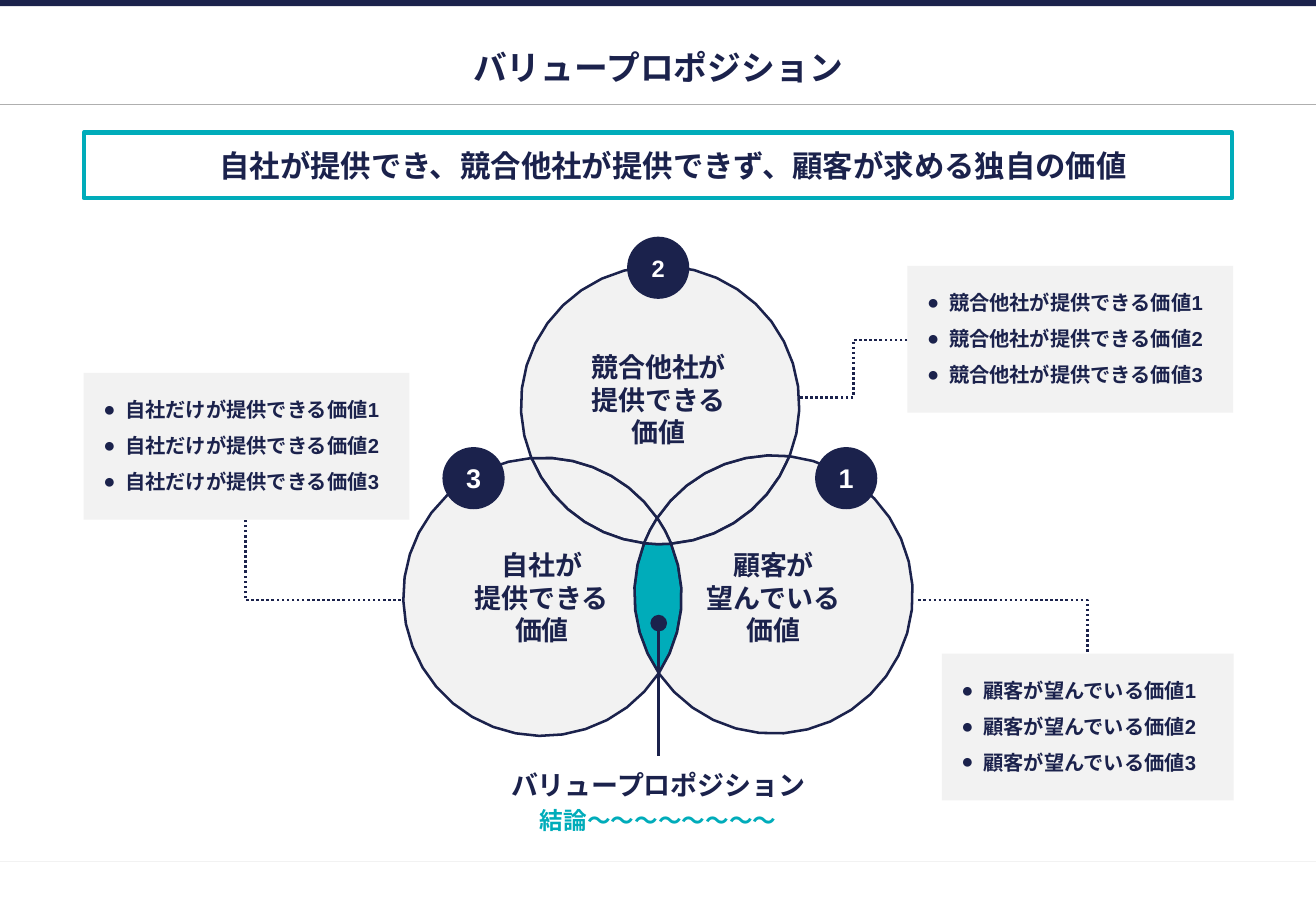
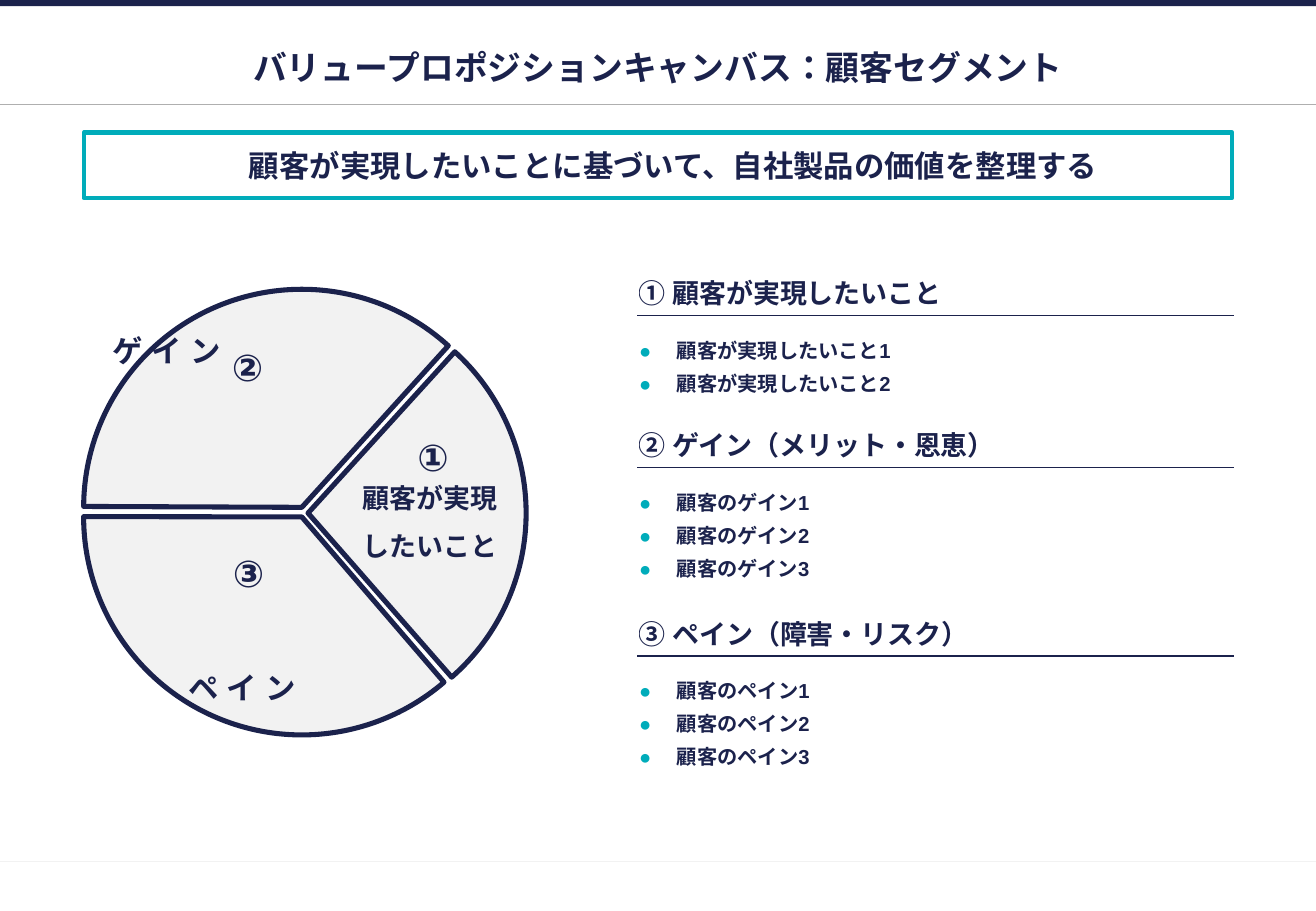
import math
from dataclasses import dataclass
from typing import Any, Optional, Sequence

import pptx
import pptx.dml.color
import pptx.enum.dml
import pptx.enum.lang
import pptx.enum.shapes
import pptx.enum.text
import pptx.oxml.ns
import pptx.presentation
import pptx.slide
import pptx.util
from lxml import etree

NAVY = pptx.dml.color.RGBColor(0x1B, 0x22, 0x4C)
TEAL = pptx.dml.color.RGBColor(0x00, 0xAC, 0xBA)
PALE = pptx.dml.color.RGBColor(0xF2, 0xF2, 0xF2)
GREY = pptx.dml.color.RGBColor(0xAF, 0xAF, 0xAF)
WHITE = pptx.dml.color.RGBColor(0xFF, 0xFF, 0xFF)
FONT = "Arial"
WIDTH, HEIGHT, MARGIN = 27.51, 19.05, 1.75
CONTENT_WIDTH = WIDTH - 2 * MARGIN
ARC_STEP = math.radians(10)

SHAPE = pptx.enum.shapes.MSO_SHAPE
CONNECTOR = pptx.enum.shapes.MSO_CONNECTOR
ANCHOR = pptx.enum.text.MSO_ANCHOR
ALIGN = pptx.enum.text.PP_ALIGN
Color = pptx.dml.color.RGBColor
Slide = pptx.slide.Slide
Point = tuple[float, float]
Insets = tuple[float, float, float, float]
NO_INSETS: Insets = (0, 0, 0, 0)
LABEL_INSETS: Insets = (0.25, 0.13, 0.25, 0.13)


@dataclass(frozen=True)
class Box:
    left: float
    top: float
    width: float
    height: float

    def lengths(self) -> list[pptx.util.Length]:
        return [pptx.util.Cm(value) for value in (self.left, self.top, self.width, self.height)]


@dataclass(frozen=True)
class Line:
    text: str
    size: float
    color: Color = NAVY
    align: Any = ALIGN.CENTER
    spacing: Optional[float] = None
    before: float = 0
    margin: float = 0
    indent: float = 0
    bullet: Optional[Color] = None


@dataclass(frozen=True)
class Circle:
    x: float
    y: float
    radius: float = 2.91

    def angle(self, point: Point) -> float:
        return math.atan2(point[1] - self.y, point[0] - self.x)

    def arc(self, start: Point, end: Point, major: bool) -> list[Point]:
        first = self.angle(start)
        sweep = math.remainder(self.angle(end) - first, math.tau)
        if major:
            sweep -= math.copysign(math.tau, sweep)
        steps = math.ceil(abs(sweep) / ARC_STEP)
        angles = [first + sweep * step / steps for step in range(1, steps + 1)]
        return [(self.x + self.radius * math.cos(a), self.y + self.radius * math.sin(a)) for a in angles]


@dataclass(frozen=True)
class Arc:
    circle: Circle
    end: Point
    major: bool = False


@dataclass(frozen=True)
class Card:
    box: Box
    text: str


@dataclass(frozen=True)
class Section:
    heading: str
    item: str
    count: int
    heading_height: float
    list_height: float
    bottom: float = 0.51


@dataclass(frozen=True)
class Pie:
    left: float
    top: float
    start: float
    end: float
    text: str = ""
    align: Any = ALIGN.LEFT
    anchor: Any = ANCHOR.TOP
    insets: Insets = NO_INSETS


def add_child(parent: Any, tag: str, **attributes: str) -> Any:
    return etree.SubElement(parent, pptx.oxml.ns.qn(tag), attributes)


def write(holder: Any, lines: Sequence[Line], insets: Insets = NO_INSETS, anchor: Any = ANCHOR.TOP) -> None:
    frame = holder.text_frame
    target = frame if hasattr(holder, "shape_type") else holder
    for side, inset in zip(("left", "top", "right", "bottom"), insets):
        setattr(target, f"margin_{side}", pptx.util.Cm(inset))
    target.vertical_anchor = anchor
    frame.word_wrap = True
    for index, line in enumerate(lines):
        paragraph = frame.add_paragraph() if index else frame.paragraphs[0]
        properties = paragraph._p.get_or_add_pPr()
        properties.set("marL", str(pptx.util.Cm(line.margin)))
        properties.set("indent", str(pptx.util.Cm(line.indent)))
        if line.bullet is not None:
            add_child(add_child(properties, "a:buClr"), "a:srgbClr", val=str(line.bullet))
            add_child(properties, "a:buFont", typeface=FONT)
            add_child(properties, "a:buChar", char="●")
        paragraph.alignment = line.align
        if line.spacing:
            paragraph.line_spacing = line.spacing
        if line.before and index:
            paragraph.space_before = pptx.util.Pt(line.before)
        run = paragraph.add_run()
        run.text = line.text
        run.font.size = pptx.util.Pt(line.size)
        run.font.bold = True
        run.font.color.rgb = line.color
        run.font.language_id = pptx.enum.lang.MSO_LANGUAGE_ID.JAPANESE
        run.font.name = FONT
        add_child(run.font._element, "a:ea", typeface=FONT)


def paint(shape: Any, fill: Color, line: Optional[Color] = None, width: float = 1.5) -> Any:
    shape.shadow.inherit = False
    shape.fill.solid()
    shape.fill.fore_color.rgb = fill
    if line is None:
        shape.line.fill.background()
    else:
        shape.line.color.rgb = line
        shape.line.width = pptx.util.Pt(width)
    return shape


def add_shape(slide: Slide, kind: Any, box: Box, fill: Color, line: Optional[Color] = None, width: float = 1.5) -> Any:
    return paint(slide.shapes.add_shape(kind, *box.lengths()), fill, line, width)


def add_text(slide: Slide, box: Box, lines: Sequence[Line], insets: Insets = LABEL_INSETS, anchor: Any = ANCHOR.TOP) -> None:
    write(slide.shapes.add_textbox(*box.lengths()), lines, insets, anchor)


def add_line(slide: Slide, start: Point, end: Point, color: Color = NAVY, width: float = 1.5, kind: Any = CONNECTOR.STRAIGHT) -> Any:
    connector = slide.shapes.add_connector(kind, *[pptx.util.Cm(value) for value in (*start, *end)])
    connector.line.color.rgb = color
    connector.line.width = pptx.util.Pt(width)
    add_child(connector._element.spPr, "a:effectLst")
    return connector


def add_dotted_elbow(slide: Slide, start: Point, end: Point, preset: str) -> None:
    connector = add_line(slide, start, end, kind=CONNECTOR.ELBOW)
    connector.line.dash_style = pptx.enum.dml.MSO_LINE.ROUND_DOT
    connector._element.spPr.find(pptx.oxml.ns.qn("a:prstGeom")).set("prst", preset)


def decorate_layout(slide: Slide) -> None:
    decorations = (
        add_line(slide, (0, 18.01), (WIDTH, 18.01), PALE, 0.75),
        add_shape(slide, SHAPE.RECTANGLE, Box(0, 0, WIDTH, 0.13), NAVY),
        add_line(slide, (0, 2.18), (WIDTH, 2.18), GREY, 0.75),
    )
    for decoration in decorations:
        slide.slide_layout.shapes.element.append(decoration._element)


def add_slide(presentation: pptx.presentation.Presentation, title: str, message: str) -> Slide:
    slide = presentation.slides.add_slide(presentation.slide_layouts[5])
    heading = slide.shapes.title
    heading.left, heading.top, heading.width, heading.height = Box(MARGIN, 0.86, CONTENT_WIDTH, 1.07).lengths()
    heading.text_frame.auto_size = pptx.enum.text.MSO_AUTO_SIZE.NONE
    write(heading, [Line(title, 20)], (0.1, 0.1, 0.1, 0.1), ANCHOR.MIDDLE)
    banner = add_shape(slide, SHAPE.RECTANGLE, Box(MARGIN, 2.77, CONTENT_WIDTH, 1.37), WHITE, TEAL, 2.5)
    write(banner, [Line(message, 18, margin=1.27, indent=-0.64)], (0.41, 0.3, 0.41, 0.3))
    return slide


def crossings(first: Circle, second: Circle) -> tuple[Point, Point]:
    dx, dy = second.x - first.x, second.y - first.y
    distance = math.hypot(dx, dy)
    ratio = math.sqrt(first.radius ** 2 - (distance / 2) ** 2) / distance
    x, y = (first.x + second.x) / 2, (first.y + second.y) / 2
    return (x + dy * ratio, y - dx * ratio), (x - dy * ratio, y + dx * ratio)


def add_region(slide: Slide, fill: Color, arcs: Sequence[Arc]) -> None:
    points = [arcs[-1].end]
    for arc in arcs:
        points += arc.circle.arc(points[-1], arc.end, arc.major)
    corners = [(pptx.util.Cm(x), pptx.util.Cm(y)) for x, y in points[:-1]]
    builder = slide.shapes.build_freeform(*corners[0], scale=1.0)
    builder.add_line_segments(corners[1:], close=True)
    paint(builder.convert_to_shape(), fill, NAVY)


def add_venn(slide: Slide) -> None:
    rival, customer, company = Circle(13.8, 8.47), Circle(16.17, 12.43), Circle(11.34, 12.48)
    right, inner_left = crossings(rival, customer)
    bottom, inner_top = crossings(customer, company)
    left, inner_right = crossings(company, rival)
    regions = (
        (PALE, (Arc(customer, inner_top), Arc(company, inner_right), Arc(rival, right))),
        (PALE, (Arc(company, inner_top), Arc(customer, inner_left), Arc(rival, left))),
        (TEAL, (Arc(rival, inner_right), Arc(company, bottom), Arc(customer, inner_left))),
        (PALE, (Arc(rival, right, True), Arc(customer, inner_top), Arc(company, left))),
        (PALE, (Arc(customer, bottom, True), Arc(company, inner_right), Arc(rival, right))),
        (PALE, (Arc(company, bottom, True), Arc(customer, inner_left), Arc(rival, left))),
        (PALE, (Arc(company, inner_right), Arc(rival, inner_left), Arc(customer, inner_top))),
    )
    for fill, arcs in regions:
        add_region(slide, fill, arcs)


def build_venn_slide(presentation: pptx.presentation.Presentation) -> Slide:
    slide = add_slide(presentation, "バリュープロポジション", "自社が提供でき、競合他社が提供できず、顧客が求める独自の価値")
    add_venn(slide)
    labels = (
        (Box(12.07, 7.21, 3.4, 2.31), ("競合他社が", "提供できる", "価値")),
        (Box(9.63, 11.35, 3.4, 2.31), ("自社が", "提供できる", "価値")),
        (Box(14.25, 11.35, 3.84, 2.31), ("顧客が", "望んでいる", "価値")),
    )
    for box, texts in labels:
        add_text(slide, box, [Line(text, 16) for text in texts])
    pointer = add_line(slide, (13.77, 15.8), (13.77, 13.03))
    add_child(pointer.line._get_or_add_ln(), "a:tailEnd", type="oval", w="lg", len="lg")
    conclusion = [Line("バリュープロポジション", 16, spacing=1.2), Line("結論〜〜〜〜〜〜〜〜", 14, TEAL, spacing=1.2)]
    add_text(slide, Box(7.87, 15.8, 11.79, 1.8), conclusion)
    cards = (
        Card(Box(19.69, 13.67, 6.1, 3.07), "顧客が望んでいる価値"),
        Card(Box(MARGIN, 7.8, 6.81, 3.07), "自社だけが提供できる価値"),
        Card(Box(18.97, 5.56, 6.81, 3.07), "競合他社が提供できる価値"),
    )
    for card in cards:
        lines = [Line(f"{card.text}{number}", 12, NAVY, ALIGN.LEFT, 1.2, 4, 0.46, -0.46, NAVY) for number in range(1, 4)]
        write(add_shape(slide, SHAPE.RECTANGLE, card.box, PALE), lines, (0.41, 0.41, 0.41, 0.41))
    add_dotted_elbow(slide, (8.38, 12.55), (5.13, 10.87), "bentConnector2")
    add_dotted_elbow(slide, (19.2, 12.55), (22.73, 13.67), "bentConnector2")
    add_dotted_elbow(slide, (18.97, 7.11), (16.71, 8.31), "bentConnector3")
    for text, left, top, size in (("1", 17.04, 9.35, 16), ("3", 9.25, 9.35, 16), ("2", 13.11, 4.95, 14)):
        badge = add_shape(slide, SHAPE.OVAL, Box(left, top, 1.3, 1.3), NAVY)
        write(badge, [Line(text, size, WHITE)], anchor=ANCHOR.MIDDLE)
    return slide


def add_rule(cell: Any, side: str) -> None:
    border = etree.Element(pptx.oxml.ns.qn(f"a:{side}"), {"w": str(pptx.util.Pt(1))})
    add_child(add_child(border, "a:solidFill"), "a:srgbClr", val=str(NAVY))
    cell._tc.get_or_add_tcPr().insert(0, border)


def add_sections(slide: Slide, sections: Sequence[Section]) -> None:
    heights = [height for section in sections for height in (section.heading_height, section.list_height)]
    box = Box(13.34, 5.66, 12.45, sum(heights))
    table = slide.shapes.add_table(len(heights), 1, *box.lengths()).table
    table.first_row = table.horz_banding = False
    for row, height in zip(table.rows, heights):
        row.height = pptx.util.Cm(height)
        row.cells[0].fill.background()
    for index, section in enumerate(sections):
        heading, details = table.cell(2 * index, 0), table.cell(2 * index + 1, 0)
        write(heading, [Line(section.heading, 16, align=ALIGN.LEFT)], (0, 0.13, 0.25, 0.13), ANCHOR.BOTTOM)
        lines = [Line(f"{section.item}{number}", 12, NAVY, ALIGN.LEFT, None, 6, 0.81, -0.79, TEAL)
                 for number in range(1, section.count + 1)]
        write(details, lines, (0, 0.51, 0, section.bottom))
        add_rule(heading, "lnB")
        add_rule(details, "lnT")


def build_segment_slide(presentation: pptx.presentation.Presentation) -> None:
    slide = add_slide(presentation, "バリュープロポジションキャンバス：顧客セグメント", "顧客が実現したいことに基づいて、自社製品の価値を整理する")
    add_sections(slide, (
        Section("① 顧客が実現したいこと", "顧客が実現したいこと", 2, 0.94, 2.24),
        Section("② ゲイン（メリット・恩恵）", "顧客のゲイン", 3, 0.94, 2.95),
        Section("③ ペイン（障害・リスク）", "顧客のペイン", 3, 0.99, 2.64, 0),
    ))
    pies = (
        Pie(MARGIN, 6.25, 29.59, 108.04, "ペ イ ン", ALIGN.CENTER, ANCHOR.BOTTOM, (0, 0, 2.49, 0.61)),
        Pie(1.88, 6.17, 187.38, 29.28),
        Pie(MARGIN, 6.05, 108.14, 187.31, "ゲ イ ン", insets=(0.61, 0.89, 0, 0)),
    )
    for pie in pies:
        shape = add_shape(slide, SHAPE.PIE, Box(pie.left, pie.top, 9.12, 9.12), PALE, NAVY, 3)
        shape.adjustments[0], shape.adjustments[1] = pie.start, pie.end
        if pie.text:
            write(shape, [Line(pie.text, 18, align=pie.align)], pie.insets, pie.anchor)
    goal = [Line("顧客が実現", 16), Line("したいこと", 16, spacing=1.5)]
    add_text(slide, Box(7.37, 10.13, 3.23, 1.57), goal, NO_INSETS, ANCHOR.MIDDLE)
    for text, left, top in (("①", 7.44, 9.09), ("②", 3.56, 7.19), ("③", 3.58, 11.51)):
        add_text(slide, Box(left, top, 3.23, 0.94), [Line(text, 22)], NO_INSETS, ANCHOR.MIDDLE)


def main() -> None:
    presentation = pptx.Presentation()
    presentation.slide_width, presentation.slide_height = pptx.util.Cm(WIDTH), pptx.util.Cm(HEIGHT)
    decorate_layout(build_venn_slide(presentation))
    build_segment_slide(presentation)
    presentation.save("out.pptx")


if __name__ == "__main__":
    main()
